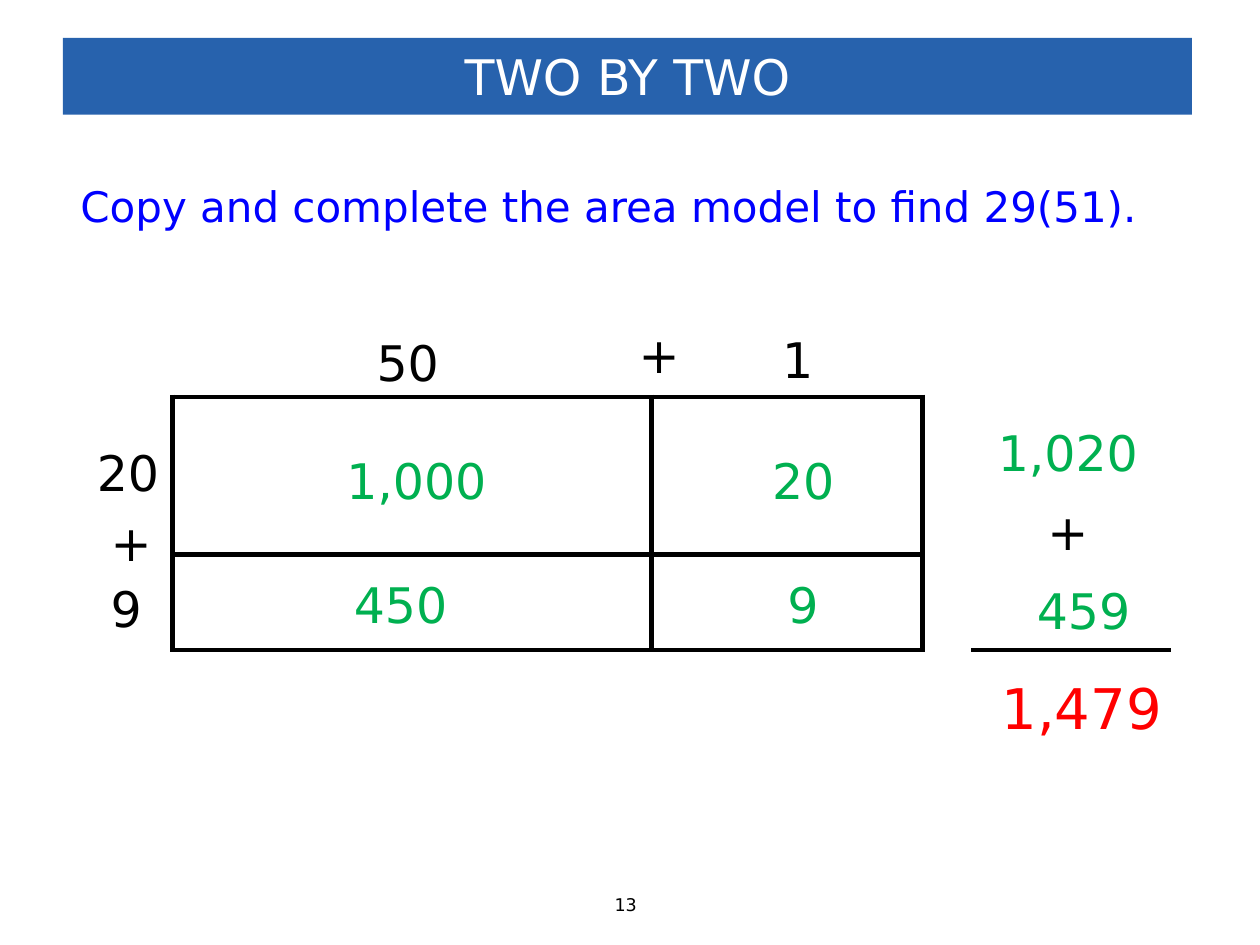
from lxml import etree
from pptx import Presentation, util as u
from pptx.dml.color import RGBColor
from pptx.enum import shapes, text
from pptx.oxml.ns import qn

FONT = "DejaVu Sans"
BLACK = RGBColor(0x00, 0x00, 0x00)
WHITE = RGBColor(0xFF, 0xFF, 0xFF)
BANNER = RGBColor(0x27, 0x62, 0xAD)
BLUE = RGBColor(0x00, 0x00, 0xFF)
GREEN = RGBColor(0x00, 0xB0, 0x50)
RED = RGBColor(0xFF, 0x00, 0x00)

# The slide is a grid of 100 columns by 75 rows of square units
UNIT = u.Inches(0.1)
COLS, ROWS = 100, 75
LABEL_H = 5.7


def grid(*lengths):
    return [round(n * UNIT) for n in lengths]


def write(p, words, size=28, color=BLACK, align=None, before=0, indent=0):
    """Fill a paragraph with one formatted run."""
    if indent:
        p._p.get_or_add_pPr().set("marL", str(u.Pt(indent)))
    p.alignment = align
    if before:
        p.space_before = u.Pt(before)
    r = p.add_run()
    r.text = words
    r.font.name, r.font.size, r.font.color.rgb = FONT, u.Pt(size), color


def add_text(slide, box, words, wrap=True, **fmt):
    tf = slide.shapes.add_textbox(*grid(*box)).text_frame
    tf.word_wrap = wrap
    write(tf.paragraphs[0], words, **fmt)
    return tf


def add_banner(slide, box, words):
    sp = slide.shapes.add_shape(shapes.MSO_SHAPE.RECTANGLE, *grid(*box))
    sp.shadow.inherit = False
    sp.fill.solid()
    sp.fill.fore_color.rgb = BANNER
    sp.line.fill.background()
    tf = sp.text_frame
    tf.vertical_anchor = text.MSO_ANCHOR.MIDDLE
    write(tf.paragraphs[0], words, color=WHITE, align=text.PP_ALIGN.CENTER)


def set_borders(cell, points):
    tcPr = cell._tc.get_or_add_tcPr()
    for i, side in enumerate(("lnL", "lnR", "lnT", "lnB")):
        ln = etree.Element(qn(f"a:{side}"), w=str(u.Pt(points)))
        fill = etree.SubElement(ln, qn("a:solidFill"))
        etree.SubElement(fill, qn("a:srgbClr"), val=str(BLACK))
        tcPr.insert(i, ln)


def add_area_model(slide, box, widths, heights):
    x, y, w, h = box
    table = slide.shapes.add_table(len(heights), len(widths), *grid(*box)).table
    table.first_row = table.horz_banding = False
    for column, width in zip(table.columns, grid(*widths)):
        column.width = width
    for row, height in zip(table.rows, grid(*heights)):
        row.height = height
    for cell in table.iter_cells():
        cell.fill.background()
        set_borders(cell, 3)

    # Offsets from the model's corner: words, left, top, width, colour
    labels = [
        # Partial products
        ("1,000", 12.8, 3.8, 14.6, GREEN),
        ("20", 46.6, 3.8, 9.4, GREEN),
        ("450", 13.4, 13.6, 9.4, GREEN),
        ("9", 47.8, 13.6, 8.6, GREEN),
        # Factor along the top
        ("50", 15.2, -5.6, 9.4, BLACK),
        ("+", 36, -6.2, 8.5, BLACK),
        ("1", 47.4, -5.8, 4.7, BLACK),
        # Factor down the side
        ("20", -7, 3.1, 7.3, BLACK),
        ("+", -5.9, 8.7, 8.5, BLACK),
        ("9", -5.9, 13.9, 7.1, BLACK),
    ]
    for words, left, top, width, color in labels:
        add_text(slide, (x + left, y + top, width, LABEL_H), words, color=color)


def add_sum(slide, box, rows, total):
    x, y, w, h = box
    center = text.PP_ALIGN.CENTER
    # Row sums, with the shorter number shifted right to line up
    tf = add_text(slide, (x, y, w, 18.5), rows[0], color=GREEN, align=center)
    write(tf.add_paragraph(), "+", align=center, before=11.6)
    write(tf.add_paragraph(), rows[1], color=GREEN, align=center,
          before=11.6, indent=18)
    # Sum line
    x1, y1, x2 = grid(x + 2.2, y + 18.6, x + 18)
    line = slide.shapes.add_connector(shapes.MSO_CONNECTOR.STRAIGHT, x1, y1, x2, y1)
    line.line.color.rgb, line.line.width = BLACK, u.Pt(2)
    etree.SubElement(line._element.spPr, qn("a:effectLst"))
    # Total
    add_text(slide, (x + 3.6, y + 20, w - 3.6, h - 20), total, size=32, color=RED)


def main():
    prs = Presentation()
    prs.slide_width, prs.slide_height = grid(COLS, ROWS)
    slide = prs.slides.add_slide(prs.slide_layouts[6])
    add_banner(slide, (5, 3, 89.6, 6.1), "TWO BY TWO")
    add_text(slide, (5.4, 13.8, 89.3, 5),
             "Copy and complete the area model to find 29(51).", size=24, color=BLUE)
    add_area_model(slide, (13.7, 31.5, 59.6, 20), (38, 21.5), (12.5, 7.6))
    add_sum(slide, (74.9, 33, 19.7, 26.4), ("1,020", "459"), "1,479")
    # Page number
    add_text(slide, (47.8, 70.5, 4.4, 2.7), "13", wrap=False, size=10)
    prs.save("out.pptx")


if __name__ == "__main__":
    main()
